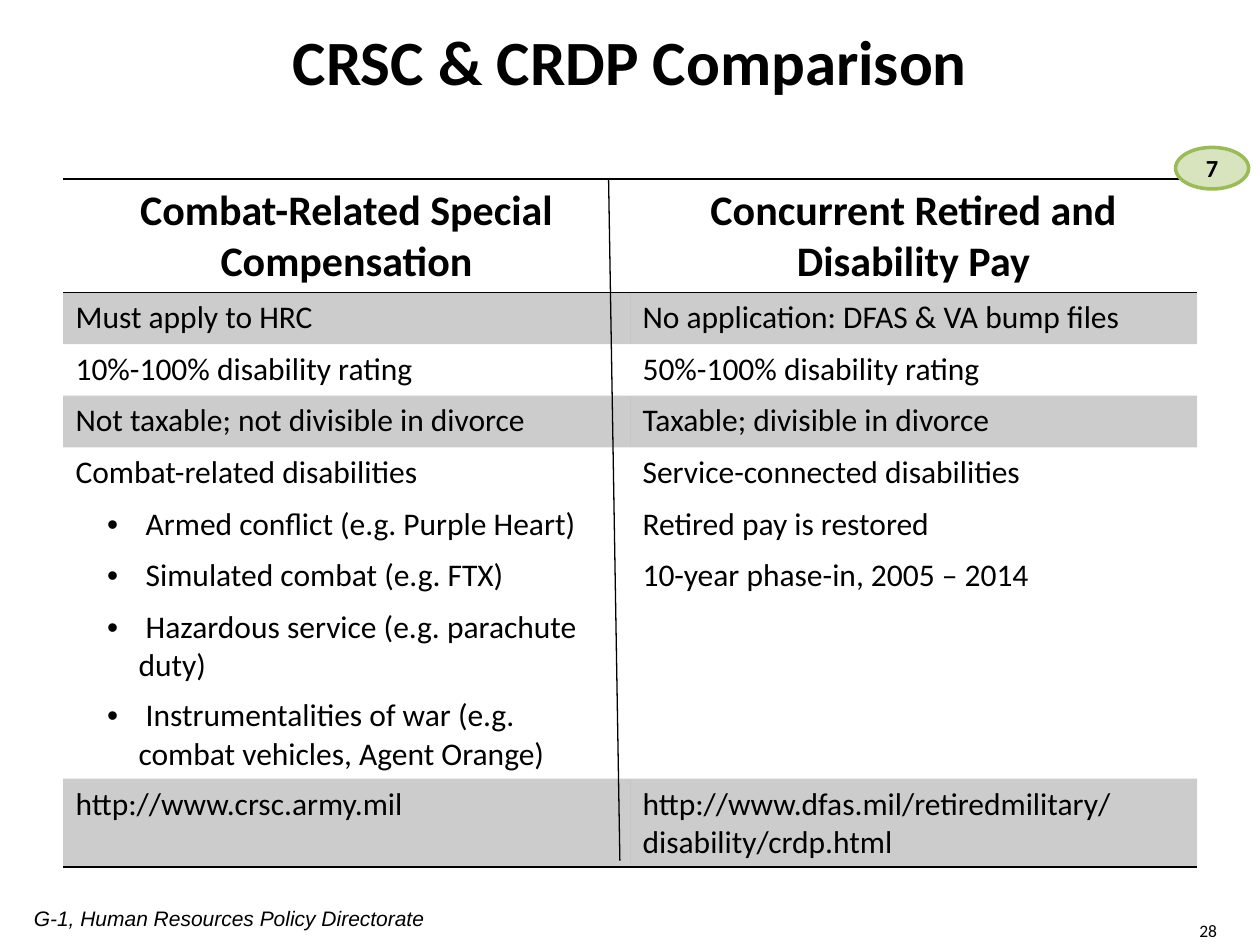
from lxml import etree
from pptx import Presentation
from pptx.dml.color import RGBColor
from pptx.enum.shapes import MSO_CONNECTOR, MSO_SHAPE
from pptx.enum.text import MSO_ANCHOR, PP_ALIGN
from pptx.oxml.ns import qn
from pptx.util import Inches, Pt

CENTER = PP_ALIGN.CENTER
LEFT = PP_ALIGN.LEFT
MIDDLE = MSO_ANCHOR.MIDDLE
OVAL = MSO_SHAPE.OVAL
STRAIGHT = MSO_CONNECTOR.STRAIGHT

BLACK = RGBColor(0x00, 0x00, 0x00)
WHITE = RGBColor(0xFF, 0xFF, 0xFF)
PALE_GREEN = RGBColor(0xD7, 0xE4, 0xBD)
GREEN = RGBColor(0x9B, 0xBB, 0x59)

PLAIN_TABLE_STYLE = "{2D5ABB26-0587-4C30-8999-92F81FD0307C}"
ROW_HEIGHT = 0.41
ROWS = [
    ("Combat-Related Special Compensation", "Concurrent Retired and Disability Pay"),
    ("Must apply to HRC", "No application: DFAS & VA bump files"),
    ("10%-100% disability rating", "50%-100% disability rating"),
    ("Not taxable; not divisible in divorce", "Taxable; divisible in divorce"),
    ("Combat-related disabilities", "Service-connected disabilities"),
    (" Armed conflict (e.g. Purple Heart)", "Retired pay is restored"),
    (" Simulated combat (e.g. FTX)", "10-year phase-in, 2005 – 2014"),
    (" Hazardous service (e.g. parachute duty)", ""),
    (" Instrumentalities of war (e.g. combat vehicles, Agent Orange)", ""),
    ("http://www.crsc.army.mil",
     "http://www.dfas.mil/retiredmilitary/ disability/crdp.html"),
]
LAST_ROW = len(ROWS) - 1
SHADED_ROWS = {1, 3, LAST_ROW}
WHITE_ROWS = {5, 6, 7}
BULLET_ROWS = {5, 6, 7, 8}


def write_text(text_frame, text, size, name="Calibri", bold=False, italic=False, align=LEFT):
    """Put one formatted paragraph into a text frame."""
    text_frame.text = text
    paragraph = text_frame.paragraphs[0]
    paragraph.alignment = align
    for run in paragraph.runs:
        run.font.size = Pt(size)
        run.font.name = name
        run.font.bold = bold
        run.font.italic = italic
        run.font.color.rgb = BLACK


def add_bullet(paragraph):
    """Give a paragraph a hanging round bullet."""
    paragraph.level = 1
    properties = paragraph._p.get_or_add_pPr()
    properties.set("marL", str(Inches(0.5)))
    properties.set("indent", str(Inches(-0.25)))
    etree.SubElement(properties, qn("a:buFont")).set("typeface", "Arial")
    etree.SubElement(properties, qn("a:buChar")).set("char", "•")


def add_borders(cell, sides):
    """Draw black rules on the named sides of a cell."""
    properties = cell._tc.get_or_add_tcPr()
    for position, side in enumerate(sides):
        line = etree.Element(qn(f"a:ln{side}"), w=str(Pt(1)))
        fill = etree.SubElement(line, qn("a:solidFill"))
        etree.SubElement(fill, qn("a:srgbClr")).set("val", str(BLACK))
        properties.insert(position, line)


def fill_cell(cell, row):
    """Fill a cell according to its row."""
    if row in SHADED_ROWS:
        cell.fill.solid()
        cell.fill.fore_color.rgb = BLACK
        color = cell._tc.tcPr.find(f"{qn('a:solidFill')}/{qn('a:srgbClr')}")
        etree.SubElement(color, qn("a:alpha")).set("val", "20000")
    elif row in WHITE_ROWS:
        cell.fill.solid()
        cell.fill.fore_color.rgb = WHITE
    else:
        cell.fill.background()


def add_title(slide, left, top, width, height):
    """Place and format the slide title."""
    title = slide.shapes.title
    title.left, title.top, title.width, title.height = map(Inches, (left, top, width, height))
    title.text_frame.vertical_anchor = MIDDLE
    write_text(title.text_frame, "CRSC & CRDP Comparison", 36, bold=True, align=CENTER)


def add_comparison(slide, left, top, width):
    """Add the two-column comparison table."""
    table = slide.shapes.add_table(
        len(ROWS), 2, Inches(left), Inches(top), Inches(width), Inches(ROW_HEIGHT * len(ROWS))
    ).table
    table.first_row = False
    table.horz_banding = False
    table._tbl.tblPr.find(qn("a:tableStyleId")).text = PLAIN_TABLE_STYLE
    for row, texts in enumerate(ROWS):
        table.rows[row].height = Inches(ROW_HEIGHT)
        for column, text in enumerate(texts):
            cell = table.cell(row, column)
            header = row == 0
            write_text(cell.text_frame, text, 24 if header else 18, bold=header,
                       align=CENTER if header else LEFT)
            if column == 0 and row in BULLET_ROWS:
                add_bullet(cell.text_frame.paragraphs[0])
            fill_cell(cell, row)
            if header:
                add_borders(cell, "TB")
            elif row == LAST_ROW:
                add_borders(cell, "B")


def add_divider(slide, start_x, start_y, end_x, end_y):
    """Draw the slanted line between the columns."""
    divider = slide.shapes.add_connector(
        STRAIGHT, Inches(start_x), Inches(start_y), Inches(end_x), Inches(end_y))
    divider.line.color.rgb = BLACK
    divider.line.width = Pt(0.75)
    etree.SubElement(divider._element.spPr, qn("a:effectLst"))


def add_badge(slide, left, top, width, height):
    """Add the green numbered oval."""
    badge = slide.shapes.add_shape(
        OVAL, Inches(left), Inches(top), Inches(width), Inches(height))
    badge.shadow.inherit = False
    badge.fill.solid()
    badge.fill.fore_color.rgb = PALE_GREEN
    badge.line.color.rgb = GREEN
    badge.line.width = Pt(2)
    badge.text_frame.vertical_anchor = MIDDLE
    write_text(badge.text_frame, "7", 14, bold=True, align=CENTER)


def add_label(slide, left, top, width, height, text, size, name, italic=False):
    """Add one footer label."""
    label = slide.shapes.add_textbox(Inches(left), Inches(top), Inches(width), Inches(height))
    label.text_frame.word_wrap = True
    write_text(label.text_frame, text, size, name, italic=italic)


def main():
    """Build and save the slide."""
    presentation = Presentation()
    presentation.slide_width = Inches(10)
    presentation.slide_height = Inches(7.5)
    slide = presentation.slides.add_slide(presentation.slide_layouts[5])
    add_label(slide, 0.17, 7.14, 3.5, 0.3, "G-1, Human Resources Policy Directorate",
              12, "Arial", italic=True)
    add_label(slide, 9.42, 7.25, 0.71, 0.27, "28", 10, "Calibri")
    add_title(slide, 0.5, 0.17, 9, 0.62)
    add_comparison(slide, 0.5, 1.42, 9)
    add_divider(slide, 4.83, 1.42, 4.92, 6.83)
    add_badge(slide, 9.33, 1.17, 0.58, 0.33)
    presentation.save("out.pptx")


if __name__ == "__main__":
    main()
